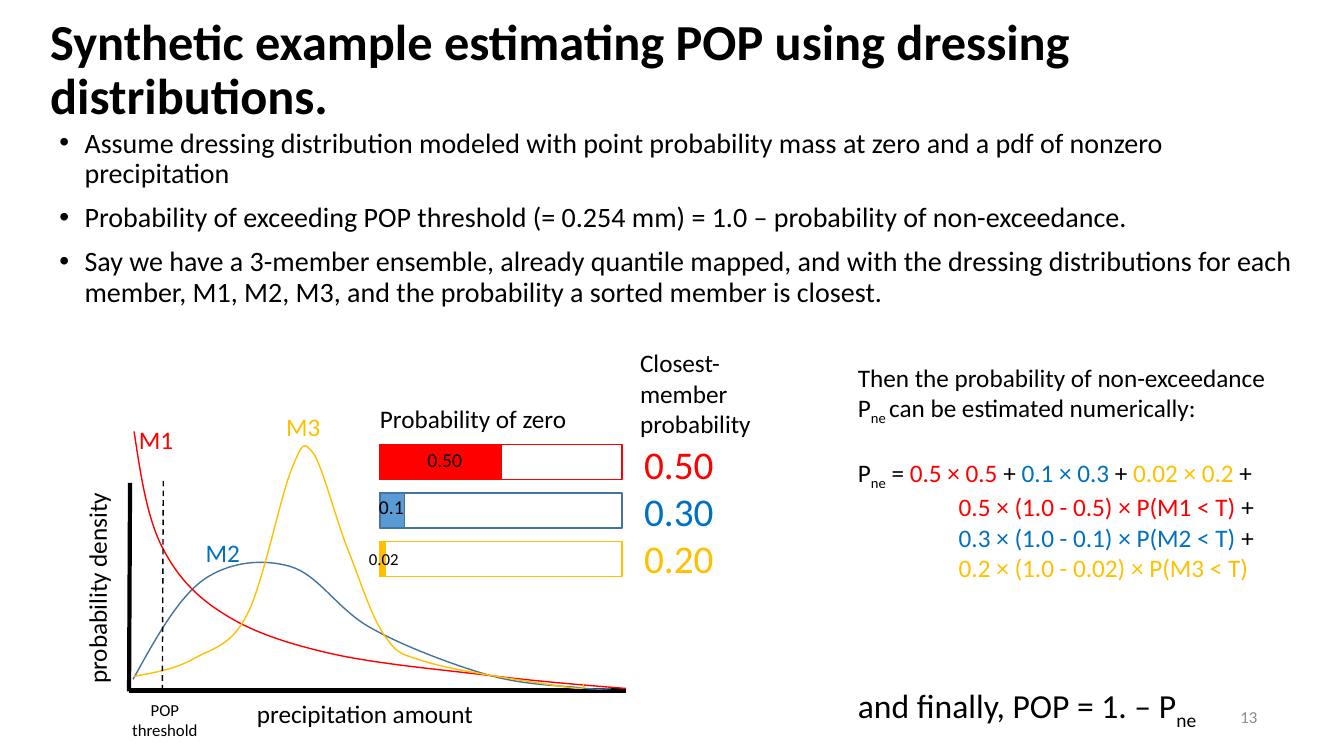
from dataclasses import dataclass

from lxml import etree
from pptx import Presentation
from pptx.dml.color import RGBColor
from pptx.enum.dml import MSO_LINE
from pptx.enum.shapes import MSO_CONNECTOR, MSO_SHAPE
from pptx.enum.text import MSO_ANCHOR, MSO_AUTO_SIZE, PP_ALIGN
from pptx.oxml.ns import qn
from pptx.util import Inches, Pt

RECT = MSO_SHAPE.RECTANGLE
STRAIGHT = MSO_CONNECTOR.STRAIGHT
DASH = MSO_LINE.DASH
MIDDLE, TOP = MSO_ANCHOR.MIDDLE, MSO_ANCHOR.TOP
FIXED, GROW = MSO_AUTO_SIZE.NONE, MSO_AUTO_SIZE.SHAPE_TO_FIT_TEXT
LEFT, CENTER, RIGHT = PP_ALIGN.LEFT, PP_ALIGN.CENTER, PP_ALIGN.RIGHT


@dataclass(frozen=True)
class Theme:
    font: str = "Calibri"
    black: str = "000000"
    white: str = "FFFFFF"
    gray: str = "8C8C8C"
    red: str = "FF0000"
    blue: str = "0070C0"
    steel: str = "43739E"
    sky: str = "5B9BD5"
    gold: str = "FFC000"
    title: int = 36
    value: int = 28
    result: int = 24
    body: int = 20
    label: int = 18
    bar: int = 14
    small: int = 12


T = Theme()

CURVES = [
    (T.steel, [(0.32, 2.74), (0.54, 2.34), (0.76, 1.94), (1.02, 1.75),
               (1.28, 1.57), (1.61, 1.54), (1.88, 1.62), (2.16, 1.7),
               (2.35, 2.05), (2.68, 2.23), (3, 2.41), (3.48, 2.59),
               (3.82, 2.69), (4.16, 2.79), (4.51, 2.8), (4.72, 2.82),
               (4.93, 2.85), (5.06, 2.83), (5.06, 2.83)]),
    (T.red, [(0.33, 0.28), (0.39, 0.68), (0.45, 1.09), (0.59, 1.39),
             (0.74, 1.7), (0.93, 1.91), (1.22, 2.09), (1.5, 2.27),
             (1.86, 2.39), (2.31, 2.49), (2.76, 2.59), (3.44, 2.65),
             (3.93, 2.71), (4.41, 2.77), (5.21, 2.83), (5.21, 2.83)]),
    (T.gold, [(0.33, 2.71), (0.54, 2.67), (0.74, 2.64), (0.93, 2.53),
              (1.11, 2.43), (1.29, 2.41), (1.45, 2.1), (1.61, 1.79),
              (1.78, 0.93), (1.89, 0.66), (2, 0.39), (2.01, 0.37),
              (2.11, 0.5), (2.2, 0.63), (2.33, 1.15), (2.45, 1.45),
              (2.57, 1.75), (2.68, 2.11), (2.81, 2.3), (2.94, 2.48),
              (2.94, 2.48), (3.24, 2.57), (3.53, 2.66), (4.31, 2.77),
              (4.57, 2.81), (4.83, 2.85), (4.8, 2.82), (4.78, 2.79)]),
]


def rgb(color):
    return RGBColor.from_string(color)


def add_text(slide, box, paragraphs, size=T.label, color=T.black, bold=False,
             align=LEFT, anchor=TOP, wrap=False, fit=GROW, spacing=None,
             before=0, bullet=False, rotation=0):
    sp = slide.shapes.add_textbox(*map(Inches, box))
    sp.rotation = rotation
    tf = sp.text_frame
    tf.word_wrap = wrap
    tf.auto_size = fit
    tf.vertical_anchor = anchor
    for i, runs in enumerate(paragraphs):
        p = tf.paragraphs[0] if i == 0 else tf.add_paragraph()
        p.alignment = align
        if spacing:
            p.line_spacing = spacing
        if i and before:
            p.space_before = Pt(before)
        if bullet:
            set_indent(p, 0.25, -0.25)
            pPr = p._p.get_or_add_pPr()
            etree.SubElement(pPr, qn("a:buFont")).set("typeface", "Arial")
            etree.SubElement(pPr, qn("a:buChar")).set("char", "•")
        for run in [(runs,)] if isinstance(runs, str) else runs:
            text, run_color, sub = (*run, None, None)[:3]
            r = p.add_run()
            r.text = text
            r.font.name, r.font.size, r.font.bold = T.font, Pt(size), bold
            r.font.color.rgb = rgb(run_color or color)
            if sub:
                r.font._element.set("baseline", "-25000")
    return tf


def set_indent(p, left, first=0):
    pPr = p._p.get_or_add_pPr()
    pPr.set("marL", str(Inches(left)))
    pPr.set("indent", str(Inches(first)))


def add_line(slide, start, end, width=3, dash=None):
    c = slide.shapes.add_connector(STRAIGHT, *map(Inches, (*start, *end)))
    c.line.color.rgb = rgb(T.black)
    c.line.width = Pt(width)
    if dash:
        c.line.dash_style = dash
    etree.SubElement(c._element.spPr, qn("a:effectLst"))


def add_bar(slide, box, fill, line):
    s = slide.shapes.add_shape(RECT, *map(Inches, box))
    s.shadow.inherit = False
    s.fill.solid()
    s.fill.fore_color.rgb = rgb(fill)
    s.line.color.rgb = rgb(line)
    s.line.width = Pt(1)


def add_curve(slide, x, y, knots, color):
    points = [(Inches(x + px), Inches(y + py)) for px, py in knots]
    builder = slide.shapes.build_freeform(*points[0])
    builder.add_line_segments(points[3::3], close=False)
    s = builder.convert_to_shape()
    for i, segment in enumerate(list(s._element.iter(qn("a:lnTo")))):
        segment.tag = qn("a:cubicBezTo")
        segment.remove(segment[0])
        for px, py in points[3 * i + 1:3 * i + 4]:
            pt = etree.SubElement(segment, qn("a:pt"))
            pt.set("x", str(px - s.left))
            pt.set("y", str(py - s.top))
    s.shadow.inherit = False
    s.fill.background()
    s.line.color.rgb = rgb(color)
    s.line.width = Pt(1)


def add_heading(slide, x, y):
    add_text(slide, (x, y, 12.73, 0.89),
             ["Synthetic example estimating POP using dressing distributions."],
             size=T.title, bold=True, anchor=MIDDLE, wrap=True, fit=FIXED, spacing=0.9)
    add_text(slide, (x + 0.09, y + 0.97, 12.65, 4.76), [
        "Assume dressing distribution modeled with point probability mass at zero "
        "and a pdf of nonzero precipitation",
        "Probability of exceeding POP threshold (= 0.254 mm) = 1.0 – probability "
        "of non-exceedance.",
        "Say we have a 3-member ensemble, already quantile mapped, and with the "
        "dressing distributions for each member, M1, M2, M3, and the probability "
        "a sorted member is closest.",
    ], size=T.body, wrap=True, fit=FIXED, spacing=0.9, before=10, bullet=True)


def add_density_plot(slide, x, y):
    add_line(slide, (x + 0.29, y + 0.79), (x + 0.28, y + 2.86))
    add_line(slide, (x + 5.21, y + 2.85), (x + 0.28, y + 2.85))
    for color, knots in CURVES:
        add_curve(slide, x, y, knots, color)
    add_line(slide, (x + 0.62, y + 0.77), (x + 0.61, y + 2.84), width=1, dash=DASH)
    add_text(slide, (x - 1.1, y + 1.62, 2.12, 0.4), ["probability density"], rotation=270)
    add_text(slide, (x + 1.45, y + 2.88, 2.37, 0.4), ["precipitation amount"])
    add_text(slide, (x + 0.14, y + 2.89, 0.99, 0.5), ["POP", "threshold"],
             size=T.small, align=CENTER, wrap=True)
    for name, dx, dy, color in [("M1", 0.28, 0.16, T.red), ("M2", 0.94, 1.28, T.blue),
                                ("M3", 1.74, 0.03, T.gold)]:
        add_text(slide, (x + dx, y + dy, 0.55, 0.4), [name], color=color)


def add_zero_bars(slide, x, y, width=2.4, height=0.35, pitch=0.48):
    add_text(slide, (x - 0.1, y - 0.46, 2.07, 0.4), ["Probability of zero"])
    members = [("0.50", T.red, T.red, 0.37, -0.02, 0.55, 0.34, T.bar),
               ("0.1", T.sky, T.steel, -0.11, -0.03, 0.45, 0.34, T.bar),
               ("0.02", T.gold, T.gold, -0.21, 0.02, 0.5, 0.3, T.small)]
    for i, (mass, fill, line, dx, dy, label_width, label_height, size) in enumerate(members):
        top = y + i * pitch
        add_bar(slide, (x, top, width, height), T.white, line)
        add_bar(slide, (x, top, width * float(mass), height), fill, line)
        add_text(slide, (x + dx, top + dy, label_width, label_height), [mass], size=size)


def add_closest_member(slide, x, y):
    add_text(slide, (x, y, 1.31, 1.01), ["Closest-", "member", "probability"])
    add_text(slide, (x + 0.04, y + 0.92, 0.9, 1.51),
             [[("0.50", T.red)], [("0.30", T.blue)], [("0.20", T.gold)]], size=T.value)


def add_derivation(slide, x, y):
    p_ne = [("P",), ("ne", None, True)]
    tf = add_text(slide, (x, y, 4.29, 2.52), [
        "Then the probability of non-exceedance",
        [("P",), ("ne ", None, True), ("can be estimated numerically:",)],
        p_ne + [(" = ",), ("0.5 × 0.5 ", T.red), ("+ ",), ("0.1 × 0.3", T.blue),
                (" + ",), ("0.02 × 0.2 ", T.gold), ("+",)],
        [("0.5 × (1.0 - 0.5) × P(M1 < T)", T.red), (" +",)],
        [("0.3 × (1.0 - 0.1) × P(M2 < T) ", T.blue), ("+",)],
        [("0.2 × (1.0 - 0.02) × P(M3 < T)", T.gold)],
    ])
    tf.paragraphs[2].space_before = Pt(22)
    for p in tf.paragraphs[3:]:
        set_indent(p, 1)
    add_text(slide, (x, y + 3.21, 3.62, 0.5),
             [[("and finally, POP = 1. – P",), p_ne[1]]], size=T.result)


def main():
    prs = Presentation()
    prs.slide_width, prs.slide_height = Inches(13.33), Inches(7.5)
    slide = prs.slides.add_slide(prs.slide_layouts[6])
    add_heading(slide, 0.4, 0.26)
    add_density_plot(slide, 1, 4)
    add_zero_bars(slide, 3.77, 4.41)
    add_closest_member(slide, 6.25, 3.4)
    add_derivation(slide, 8.41, 3.54)
    add_text(slide, (9.57, 6.91, 3, 0.4), ["13"], size=T.small, color=T.gray,
             align=RIGHT, anchor=MIDDLE, wrap=True, fit=FIXED)
    prs.save("out.pptx")


if __name__ == "__main__":
    main()
